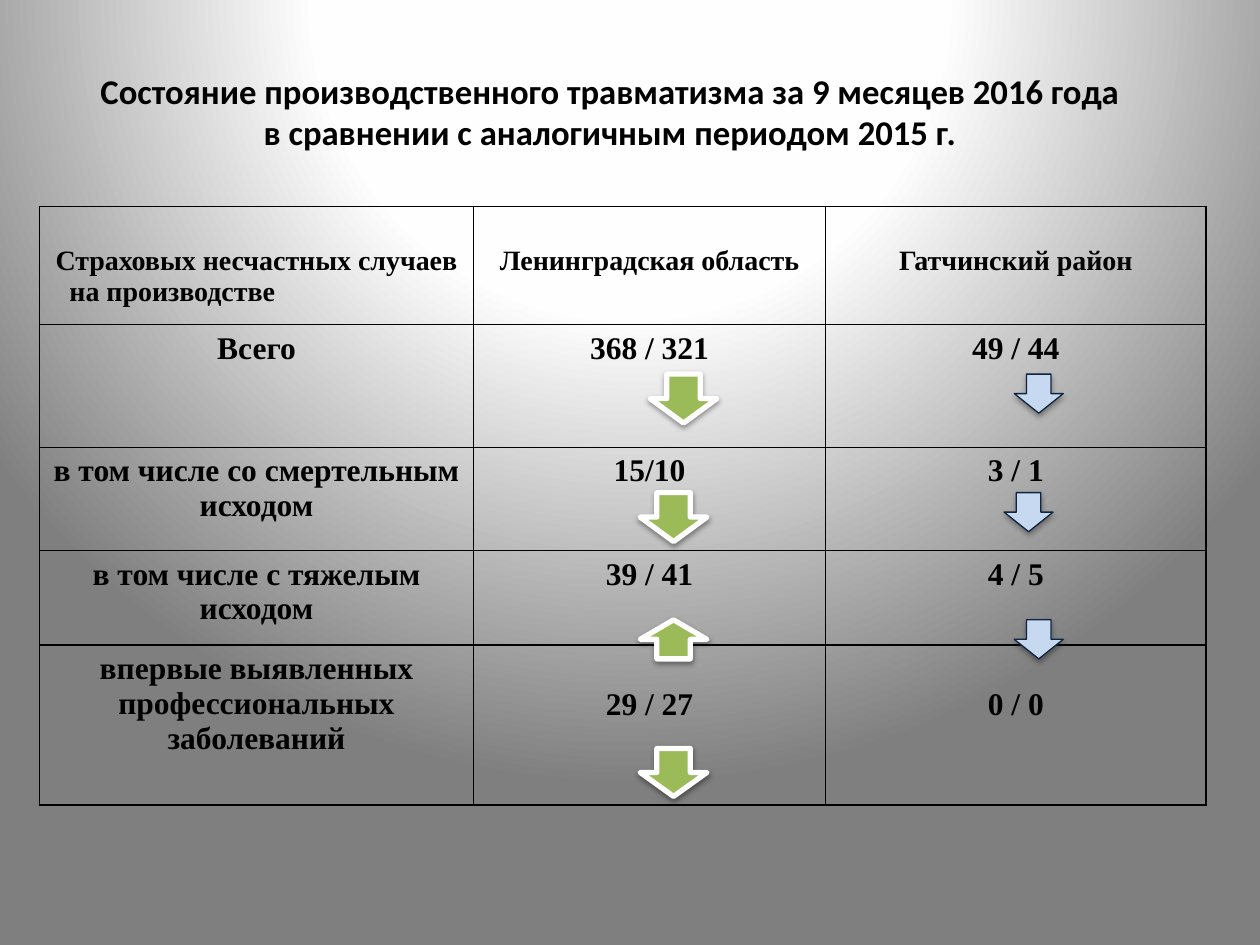
from dataclasses import dataclass

from pptx import Presentation
from pptx.dml.color import RGBColor
from pptx.enum.shapes import MSO_SHAPE
from pptx.enum.text import MSO_ANCHOR, PP_ALIGN
from pptx.oxml import parse_xml
from pptx.oxml.ns import nsdecls
from pptx.util import Pt


@dataclass(frozen=True)
class Theme:
    ink: str = "000000"
    backdrop: tuple = ((0, "FFFFFF"), (40, "FEFEFE"), (100, "7F7F7F"))
    title_font: str = "Calibri"
    table_font: str = "Times New Roman"
    title_size: float = 19.8
    header_size: float = 16
    body_size: float = 18
    border_width: float = 1


@dataclass(frozen=True)
class ArrowLook:
    fill: str
    outline: str
    outline_width: float
    shadow_alpha: int
    shadow_distance: float


REGION_LOOK = ArrowLook("9BBB59", "FFFFFF", 3, 38, 1.6)
DISTRICT_LOOK = ArrowLook("C6D9F1", "0F243E", 0.75, 35, 1.8)

TITLE = ["Состояние производственного травматизма за 9 месяцев 2016 года",
         "в сравнении с аналогичным периодом 2015 г."]
HEADERS = [["Страховых несчастных случаев", "на производстве"],
           ["Ленинградская область"], ["Гатчинский район"]]
CASES = [
    [["Всего"], ["368 / 321"], ["49 / 44"]],
    [["в том числе со смертельным исходом"], ["15/10"], ["3 / 1"]],
    [["в том числе с тяжелым исходом"], ["39 / 41"], ["4 / 5"]],
    [["впервые выявленных профессиональных", "заболеваний"], ["29 / 27"], ["0 / 0"]],
]
COLUMN_WIDTHS = [248.2, 201, 217.6]
ROW_HEIGHTS = [67.5, 70.2, 59, 54, 91.2]
HEADER_TOP = 22
LAST_COUNT_TOP = 24.3

# left, top, width, height, rotation
REGION_ARROWS = [(371.5, 213.8, 38.2, 28, 0), (365.8, 281.5, 38.2, 28, 0),
                 (365.8, 354.2, 38.2, 22.3, 180), (365.8, 427.7, 38.2, 27.4, 0)]
DISTRICT_ARROWS = [(579.6, 213.8, 28, 22.3, 0), (573.8, 281.5, 28, 22.3, 0),
                   (579.6, 354.2, 28, 22.3, 0)]


def apply(target, formats):
    for name, value in formats.items():
        setattr(target, name, value)


class SlideBuilder:
    def __init__(self, theme, slide):
        self.theme = theme
        self.slide = slide

    def background(self):
        stops = "".join(
            f'<a:gs pos="{position * 1000}"><a:srgbClr val="{color}"/></a:gs>'
            for position, color in self.theme.backdrop)
        self.slide.element[0].insert(0, parse_xml(
            f'<p:bg {nsdecls("p", "a")}><p:bgPr><a:gradFill rotWithShape="1">'
            f'<a:gsLst>{stops}</a:gsLst><a:path path="circle">'
            '<a:fillToRect l="50000" t="-80000" r="50000" b="180000"/></a:path>'
            '</a:gradFill><a:effectLst/></p:bgPr></p:bg>'))

    def fill_text(self, frame, lines, font, size):
        """Fill a text frame with centred bold paragraphs."""
        frame.word_wrap = True
        for index, line in enumerate(lines):
            paragraph = frame.paragraphs[0] if index == 0 else frame.add_paragraph()
            paragraph.alignment = PP_ALIGN.CENTER
            run = paragraph.add_run()
            run.text = line
            apply(run.font, {"name": font, "size": Pt(size), "bold": True})
            run.font.color.rgb = RGBColor.from_string(self.theme.ink)

    def title(self, lines, left, top, width, height):
        box = self.slide.shapes.add_textbox(Pt(left), Pt(top), Pt(width), Pt(height))
        box.text_frame.vertical_anchor = MSO_ANCHOR.MIDDLE
        self.fill_text(box.text_frame, lines, self.theme.title_font, self.theme.title_size)

    def border(self, cell):
        properties = cell._tc.get_or_add_tcPr()
        for side in "LRTB":
            properties.append(parse_xml(
                f'<a:ln{side} {nsdecls("a")} w="{Pt(self.theme.border_width)}">'
                f'<a:solidFill><a:srgbClr val="{self.theme.ink}"/></a:solidFill>'
                f'</a:ln{side}>'))
        cell.fill.background()

    def table(self, rows, left, top):
        table = self.slide.shapes.add_table(
            len(rows), len(COLUMN_WIDTHS), Pt(left), Pt(top),
            Pt(sum(COLUMN_WIDTHS)), Pt(sum(ROW_HEIGHTS))).table
        apply(table, {"first_row": False, "horz_banding": False})
        for column, width in zip(table.columns, COLUMN_WIDTHS):
            column.width = Pt(width)
        for row_index, (row, height) in enumerate(zip(rows, ROW_HEIGHTS)):
            table.rows[row_index].height = Pt(height)
            size = self.theme.body_size if row_index else self.theme.header_size
            for column_index, lines in enumerate(row):
                cell = table.cell(row_index, column_index)
                self.border(cell)
                self.fill_text(cell.text_frame, lines, self.theme.table_font, size)
                if row_index == 0:
                    cell.margin_top = Pt(HEADER_TOP)
                elif row_index == len(rows) - 1 and column_index:
                    cell.margin_top = Pt(LAST_COUNT_TOP)
        return table

    def arrow(self, look, left, top, width, height, rotation):
        arrow = self.slide.shapes.add_shape(
            MSO_SHAPE.DOWN_ARROW, Pt(left), Pt(top), Pt(width), Pt(height))
        arrow.rotation = rotation
        arrow.fill.solid()
        arrow.fill.fore_color.rgb = RGBColor.from_string(look.fill)
        arrow.line.color.rgb = RGBColor.from_string(look.outline)
        arrow.line.width = Pt(look.outline_width)
        arrow._element.spPr.append(parse_xml(
            f'<a:effectLst {nsdecls("a")}><a:outerShdw blurRad="{Pt(3.1)}" '
            f'dist="{Pt(look.shadow_distance)}" dir="5400000" rotWithShape="0">'
            f'<a:srgbClr val="000000"><a:alpha val="{look.shadow_alpha * 1000}"/>'
            '</a:srgbClr></a:outerShdw></a:effectLst>'))


def main():
    deck = Presentation()
    apply(deck, {"slide_width": Pt(720), "slide_height": Pt(540)})
    builder = SlideBuilder(Theme(), deck.slides.add_slide(deck.slide_layouts[6]))
    builder.background()
    builder.title(TITLE, 42.5, 18.5, 612, 90)
    injuries = builder.table([HEADERS, *CASES], 22.5, 118)
    subject_end = injuries.cell(0, 0).text_frame.paragraphs[-1]
    subject_end.alignment = PP_ALIGN.LEFT
    subject_end._p.get_or_add_pPr().set("indent", str(Pt(10)))
    for look, places in ((REGION_LOOK, REGION_ARROWS), (DISTRICT_LOOK, DISTRICT_ARROWS)):
        for place in places:
            builder.arrow(look, *place)
    deck.save("out.pptx")


if __name__ == "__main__":
    main()
